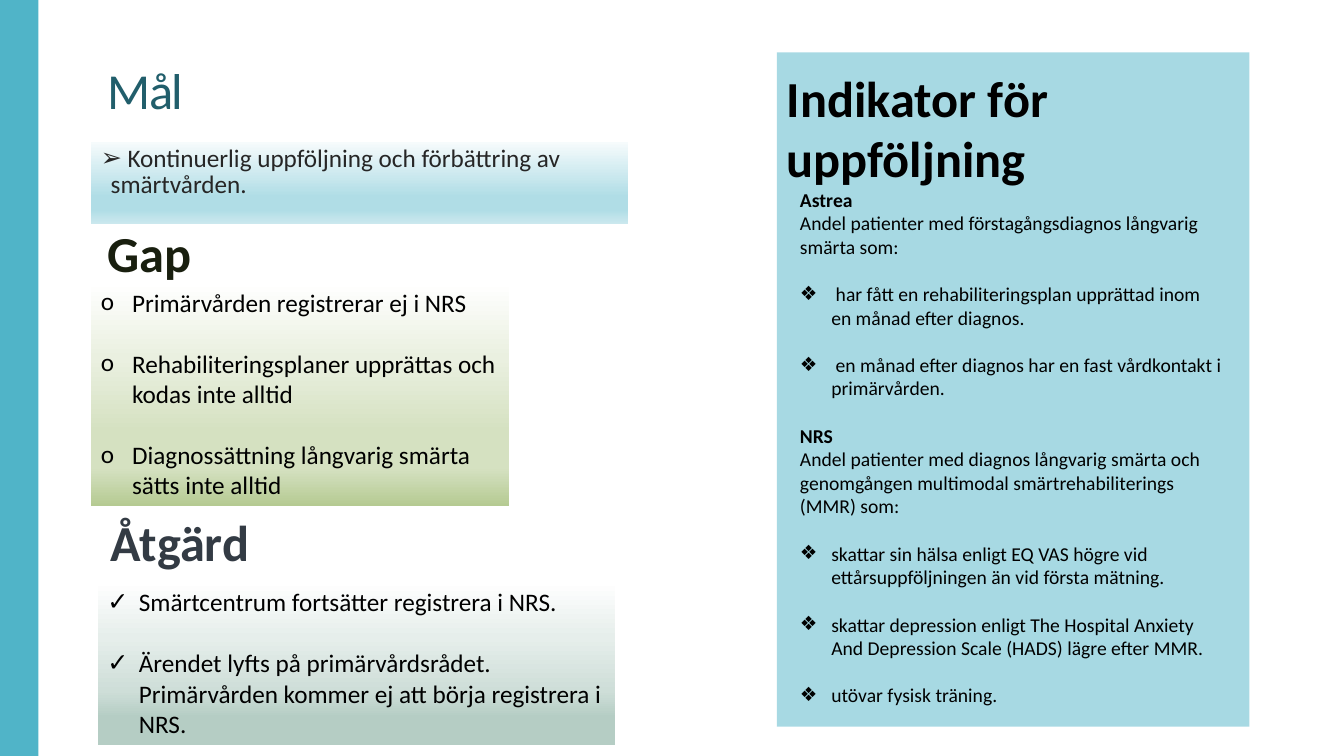
from dataclasses import dataclass
from typing import Optional

from lxml.etree import SubElement
from pptx import Presentation
from pptx.dml.color import RGBColor
from pptx.enum.shapes import MSO_SHAPE as Preset
from pptx.enum.text import MSO_ANCHOR as Anchor, MSO_AUTO_SIZE as AutoSize, PP_ALIGN as Align
from pptx.oxml.ns import qn
from pptx.util import Cm, Pt

FONT = "Calibri"
TEAL = "50B4C8"
BLACK = "000000"
HANGING = 0.79  # cm


@dataclass
class Line:
    text: str
    bullet: str = ""
    bold: bool = False
    gap: float = 0  # points above the line


@dataclass
class Block:
    box: tuple[float, float, float, float]  # left, top, width, height in cm
    lines: list[Line]
    size: float = 18
    color: str = BLACK
    anchor: Anchor = Anchor.TOP
    stops: Optional[dict[int, str]] = None  # gradient: percent -> colour
    line_spacing: float = 1.0
    hanging: float = HANGING


def heading(box: tuple, color: str, *texts: str) -> Block:
    return Block(box, [Line(text, bold=True) for text in texts], 36, color, Anchor.BOTTOM)


def bullets(symbol: str, gap: float, *texts: str) -> list[Line]:
    """Bulleted lines, one empty line's height apart."""
    return [Line(text, symbol, gap=gap if index else 0) for index, text in enumerate(texts)]


GOAL = Block(
    (2.29, 3.58, 13.54, 2.06),
    bullets("➢", 0, " Kontinuerlig uppföljning och förbättring av smärtvården."),
    color="262626", line_spacing=0.85, hanging=0.25,
    stops={0: "F6FBFC", 67: "B0DDE6", 83: "B0DDE6", 100: "CBE8EE"},
)
GAP = Block(
    (2.29, 7.11, 10.54, 5.64),
    bullets("o", 22, "Primärvården registrerar ej i NRS",
            "Rehabiliteringsplaner upprättas och kodas inte alltid",
            "Diagnossättning långvarig smärta sätts inte alltid"),
    stops={0: "FFFFFF", 34: "EAF0E0", 67: "D5E1C1", 83: "D5E1C1", 100: "B5CA92"},
)
ACTION = Block(
    (2.46, 14.66, 13.03, 4.11),
    bullets("✓", 22, "Smärtcentrum fortsätter registrera i NRS.",
            "Ärendet lyfts på primärvårdsrådet. Primärvården kommer ej att börja registrera i NRS."),
    stops={0: "FFFFFF", 34: "E6EEEB", 67: "CEDED8", 83: "B5CDC4", 100: "B5CDC4"},
)
INDICATORS = Block(
    (19.91, 4.6, 11.18, 14.78),
    [
        Line("Astrea", bold=True),
        Line("Andel patienter med förstagångsdiagnos långvarig smärta som:"),
        Line(" har fått en rehabiliteringsplan upprättad inom en månad efter diagnos.", "❖", gap=17),
        Line(" en månad efter diagnos har en fast vårdkontakt i primärvården.", "❖", gap=17),
        Line("NRS", bold=True, gap=17),
        Line("Andel patienter med diagnos långvarig smärta och genomgången multimodal "
             "smärtrehabiliterings (MMR) som:"),
        Line("skattar sin hälsa enligt EQ VAS högre vid ettårsuppföljningen än vid första mätning.",
             "❖", gap=17),
        Line("skattar depression enligt The Hospital Anxiety And Depression Scale (HADS) "
             "lägre efter MMR.", "❖", gap=17),
        Line("utövar fysisk träning.", "❖", gap=17),
    ],
    size=14,
)
BLOCKS = [
    GOAL,
    heading((19.58, 0.64, 11.46, 4.22), BLACK, "Indikator för", "uppföljning"),
    heading((2.46, 5.79, 6.45, 1.45), "191F0F", "Gap"),
    heading((2.54, 12.85, 5.56, 1.68), "333B44", "Åtgärd"),
    GAP, ACTION, INDICATORS,
]
TITLE = Block((2.46, -0.53, 13.18, 3.68), [Line("Mål")], 36, "215E6B", Anchor.BOTTOM,
              line_spacing=0.85)


def rgb(color: str) -> RGBColor:
    return RGBColor.from_string(color)


def apply(target, values: dict) -> None:
    for name, value in values.items():
        setattr(target, name, value)


def place(box: tuple) -> list:
    return [Cm(length) for length in box]


def add_panel(slide, box: tuple, color: str):
    shape = slide.shapes.add_shape(Preset.RECTANGLE, *place(box))
    shape.shadow.inherit = False
    shape.line.fill.background()
    shape.fill.solid()
    shape.fill.fore_color.rgb = rgb(color)
    return shape


def set_alpha(shape, percent: int) -> None:
    color = shape.fill._xPr.find(f"{qn('a:solidFill')}/{qn('a:srgbClr')}")
    SubElement(color, qn("a:alpha"), val=str(percent * 1000))


def set_gradient(shape, stops: dict[int, str]) -> None:
    shape.fill.gradient()
    shape.fill.gradient_angle = 270  # top to bottom
    stop_list = shape.fill._xPr.find(f"{qn('a:gradFill')}/{qn('a:gsLst')}")
    for old_stop in list(stop_list):
        stop_list.remove(old_stop)
    for percent, color in stops.items():
        stop = SubElement(stop_list, qn("a:gs"), pos=str(percent * 1000))
        SubElement(stop, qn("a:srgbClr"), val=color)


def set_bullet(paragraph, symbol: str, hanging: float) -> None:
    properties = paragraph._p.get_or_add_pPr()
    properties.set("marL", str(Cm(hanging)))
    properties.set("indent", str(-Cm(hanging)))
    SubElement(properties, qn("a:buFont"), typeface=FONT)
    SubElement(properties, qn("a:buChar"), char=symbol)


def write(shape, block: Block) -> None:
    frame = shape.text_frame
    apply(frame, {"word_wrap": True, "auto_size": AutoSize.NONE, "vertical_anchor": block.anchor})
    for index, line in enumerate(block.lines):
        paragraph = frame.add_paragraph() if index else frame.paragraphs[0]
        apply(paragraph, {"alignment": Align.LEFT, "line_spacing": block.line_spacing,
                          "space_before": Pt(line.gap)})
        if line.bullet:
            set_bullet(paragraph, line.bullet, block.hanging)
        run = paragraph.add_run()
        run.text = line.text
        apply(run.font, {"name": FONT, "size": Pt(block.size), "bold": line.bold})
        run.font.color.rgb = rgb(block.color)


def add_block(slide, block: Block) -> None:
    if block.stops:
        shape = add_panel(slide, block.box, TEAL)
        set_gradient(shape, block.stops)
    else:
        shape = slide.shapes.add_textbox(*place(block.box))
    write(shape, block)


def add_title(slide, block: Block) -> None:
    title = slide.shapes.title
    apply(title, dict(zip(("left", "top", "width", "height"), place(block.box))))
    write(title, block)
    run = title.text_frame.paragraphs[0].runs[0]
    run.font._element.set("spc", "-120")  # tighter letters


def main() -> None:
    presentation = Presentation()
    apply(presentation, {"slide_width": Cm(33.87), "slide_height": Cm(19.05)})
    slide = presentation.slides.add_slide(presentation.slide_layouts[5])

    # Side bar and indicator panel
    add_panel(slide, (0, 0, 0.97, 19.05), TEAL)
    set_alpha(add_panel(slide, (19.58, 1.32, 11.91, 16.99), TEAL), 50)

    # Headings and lists
    add_title(slide, TITLE)
    for block in BLOCKS:
        add_block(slide, block)

    presentation.save("out.pptx")


if __name__ == "__main__":
    main()
